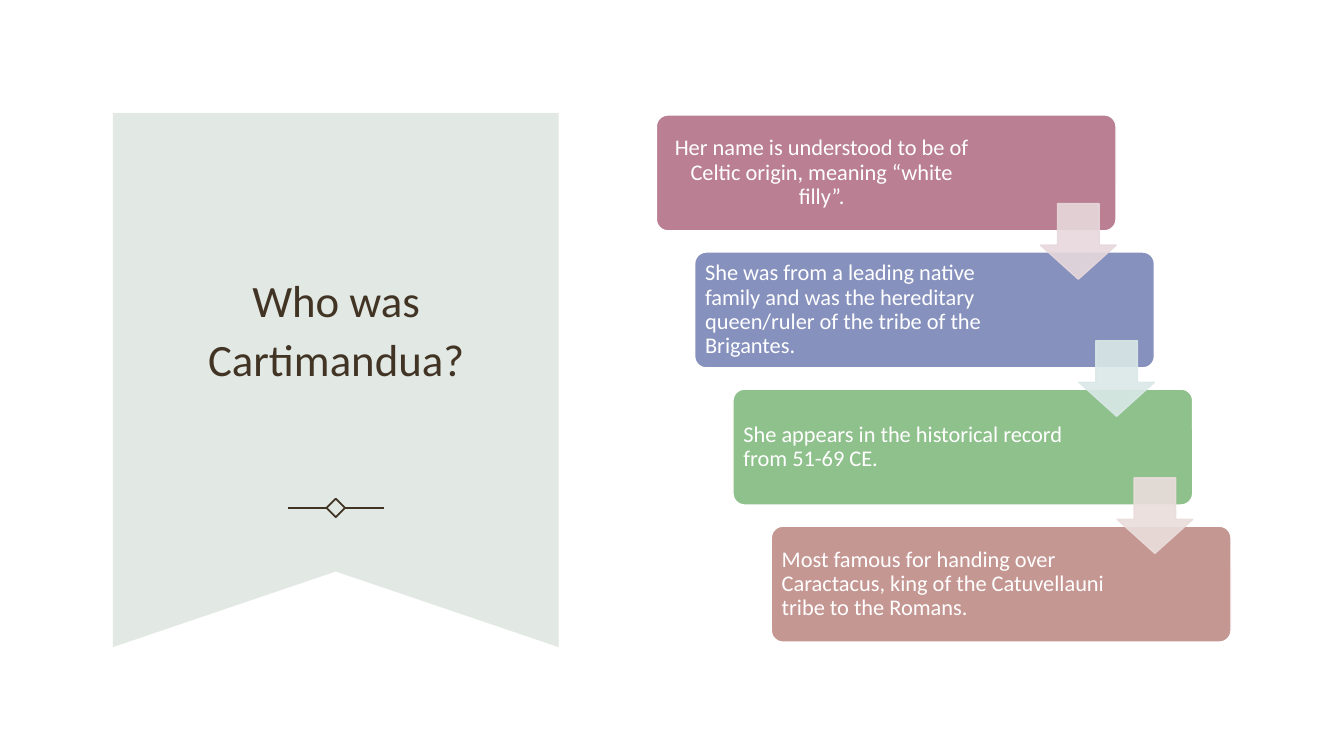
from lxml import etree
from pptx import Presentation
from pptx.dml.color import RGBColor
from pptx.enum.shapes import MSO_CONNECTOR, MSO_SHAPE
from pptx.enum.text import MSO_ANCHOR, PP_ALIGN
from pptx.oxml.ns import qn
from pptx.util import Inches, Pt

STRAIGHT = MSO_CONNECTOR.STRAIGHT
RECT, ROUND_RECT = MSO_SHAPE.RECTANGLE, MSO_SHAPE.ROUNDED_RECTANGLE
DOWN_ARROW = MSO_SHAPE.DOWN_ARROW
MIDDLE = MSO_ANCHOR.MIDDLE
LEFT, CENTER = PP_ALIGN.LEFT, PP_ALIGN.CENTER

TITLE = "Who was Cartimandua?"
# text, fill, alignment, right inset
STEPS = [
    ("Her name is understood to be of Celtic origin, meaning “white filly”.",
     "BA7F93", CENTER, 1.35),
    ("She was from a leading native family and was the hereditary "
     "queen/ruler of the tribe of the Brigantes.", "8691BE", LEFT, 1.2),
    ("She appears in the historical record from 51-69 CE.",
     "8FC18C", LEFT, 1.2),
    ("Most famous for handing over Caractacus, king of the Catuvellauni "
     "tribe to the Romans.", "C59793", LEFT, 1.2),
]
ARROW_COLORS = ["E7D8DC", "DAE8E7", "EADDDC"]

THEME = {
    "font": "Calibri", "title_size": 32, "step_size": 16,
    "ink": "413424", "banner": "E2E8E3", "white": "FFFFFF",
    "rule_width": 1.25, "edge_width": 1, "arrow_opacity": 90,
}

BANNER = [(1.12, 1.12), (5.54, 1.12), (5.54, 6.42), (3.33, 5.67), (1.12, 6.42)]
TITLE_BOX = (1.56, 1.81, 3.55, 2.85)
ORNAMENT_X, ORNAMENT_Y = 3.33, 5.04
DIAMOND, RULE_GAP, RULE_END = 0.13, 0.09, 0.475
STEP_X, STEP_Y, STEP_W, STEP_H = 6.51, 1.14, 4.56, 1.15
SHIFT_X, SHIFT_Y = 0.38, 1.36
ARROW, ARROW_DROP = 0.75, 0.88
INSET = 0.07


def inches(*values):
    return [Inches(v) for v in values]


def paint(sp, fill=None, line=None, width=1, opacity=100):
    sp.shadow.inherit = False
    for part, color in ((sp.fill, fill), (sp.line.fill, line)):
        if color is None:
            part.background()
            continue
        part.solid()
        part.fore_color.rgb = RGBColor.from_string(color)
    if line:
        sp.line.width = Pt(width)
    if opacity < 100:
        for clr in sp._element.spPr.iter(qn("a:srgbClr")):
            etree.SubElement(clr, qn("a:alpha"), val=str(opacity * 1000))


def write(sp, text, size, color, align, spacing, **frame):
    tf = sp.text_frame
    settings = {"word_wrap": True, "vertical_anchor": MIDDLE, **frame}
    for name, value in settings.items():
        setattr(tf, name, value)
    p = tf.paragraphs[0]
    p.alignment, p.line_spacing = align, spacing
    r = p.add_run()
    r.text = text
    r.font.name, r.font.size = THEME["font"], Pt(size)
    r.font.color.rgb = RGBColor.from_string(color)


def add_banner(shapes):
    start, *rest = [inches(*point) for point in BANNER]
    builder = shapes.build_freeform(*start)
    builder.add_line_segments(rest, close=True)
    paint(builder.convert_to_shape(), THEME["banner"])
    write(shapes.add_textbox(*inches(*TITLE_BOX)), TITLE,
          THEME["title_size"], THEME["ink"], CENTER, 1.1)


def add_ornament(shapes):
    """Diamond with a short rule on each side."""
    sp = shapes.add_shape(RECT, *inches(
        ORNAMENT_X - DIAMOND / 2, ORNAMENT_Y - DIAMOND / 2, DIAMOND, DIAMOND))
    sp.rotation = 45
    paint(sp, line=THEME["ink"], width=THEME["rule_width"])
    for side in (-1, 1):
        rule = shapes.add_connector(STRAIGHT, *inches(
            ORNAMENT_X + side * RULE_GAP, ORNAMENT_Y,
            ORNAMENT_X + side * RULE_END, ORNAMENT_Y))
        rule.line.color.rgb = RGBColor.from_string(THEME["ink"])
        rule.line.width = Pt(THEME["rule_width"])
        etree.SubElement(rule._element.spPr, qn("a:effectLst"))


def add_steps(shapes):
    for i, (text, fill, align, right) in enumerate(STEPS):
        sp = shapes.add_shape(ROUND_RECT, *inches(
            STEP_X + i * SHIFT_X, STEP_Y + i * SHIFT_Y, STEP_W, STEP_H))
        sp.adjustments[0] = 0.1
        paint(sp, fill, THEME["white"], THEME["edge_width"])
        write(sp, text, THEME["step_size"], THEME["white"], align, 0.9,
              margin_left=Inches(INSET), margin_right=Inches(right),
              margin_top=Inches(INSET), margin_bottom=Inches(INSET))


def add_arrows(shapes):
    for i, color in enumerate(ARROW_COLORS):
        sp = shapes.add_shape(DOWN_ARROW, *inches(
            STEP_X + STEP_W - ARROW + i * SHIFT_X,
            STEP_Y + ARROW_DROP + i * SHIFT_Y, ARROW, ARROW))
        # head length, then shaft width
        sp.adjustments[0], sp.adjustments[1] = 0.55, 0.45
        paint(sp, color, color, THEME["edge_width"], THEME["arrow_opacity"])


def main():
    prs = Presentation()
    prs.slide_width, prs.slide_height = inches(13.33, 7.5)
    s = prs.slides.add_slide(prs.slide_layouts[6])
    for add_part in (add_banner, add_ornament, add_steps, add_arrows):
        add_part(s.shapes)
    prs.save("out.pptx")


if __name__ == "__main__":
    main()
